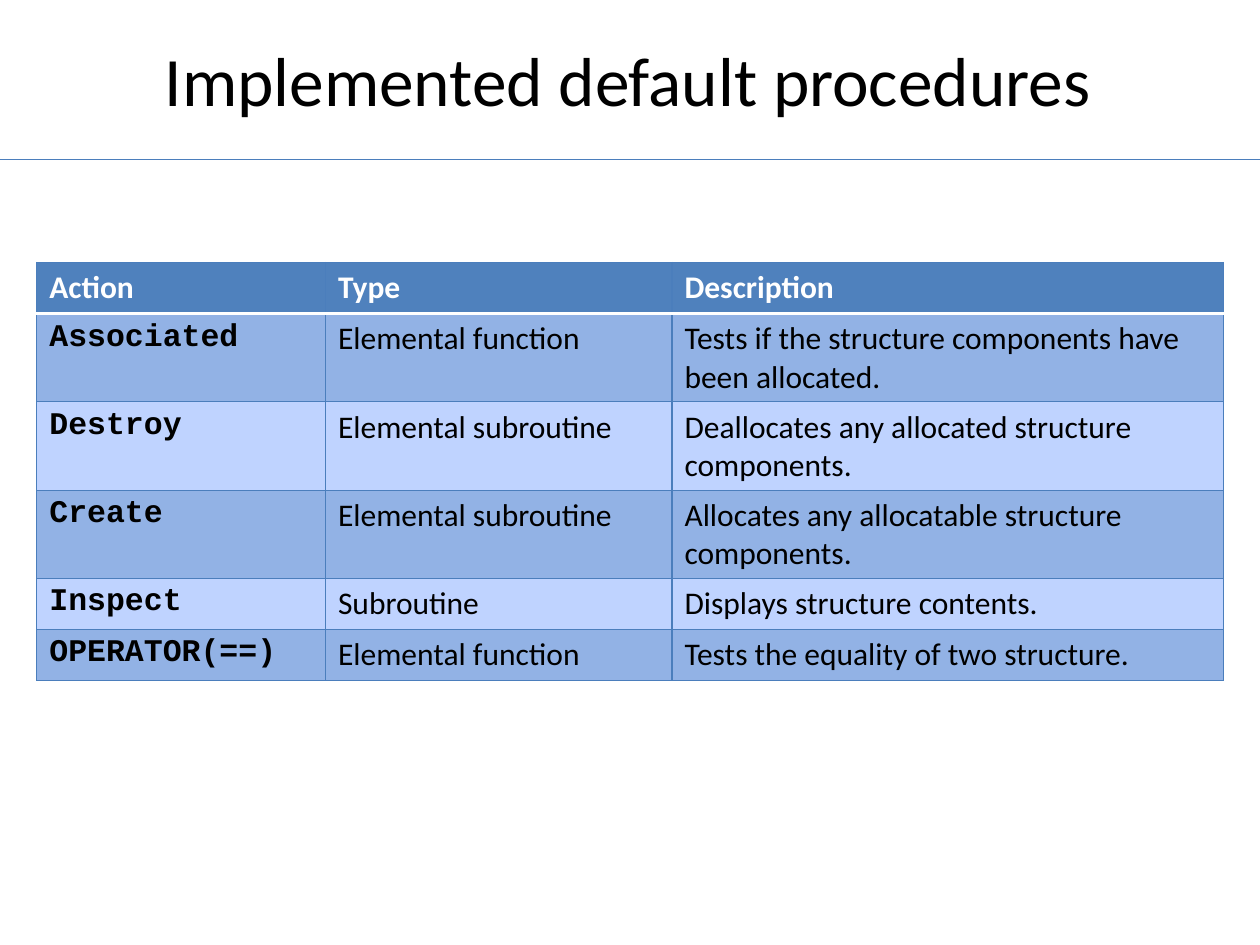
from dataclasses import dataclass

from lxml import etree
from pptx import Presentation
from pptx.dml.color import RGBColor
from pptx.enum import shapes, text
from pptx.oxml.ns import qn
from pptx.util import Pt


@dataclass(frozen=True)
class Theme:
    body_font: str = "Calibri"
    code_font: str = "Courier New"
    title_size: float = 39.6
    table_size: float = 18
    ink: str = "000000"
    white: str = "FFFFFF"
    rule: str = "4B7EBC"
    header: str = "4F81BD"
    bands: tuple = ("92B2E5", "BFD3FF")
    thin: float = 0.75
    thick: float = 2


class SlideBuilder:
    def __init__(self, slide, theme):
        self.slide = slide
        self.theme = theme

    def style(self, p, size, color, font, bold=False):
        for r in p.runs:
            r.font.size = Pt(size)
            r.font.name = font
            r.font.bold = bold
            r.font.color.rgb = RGBColor.from_string(color)

    def title(self, words, x, y, w, h):
        tf = self.slide.shapes.add_textbox(Pt(x), Pt(y), Pt(w), Pt(h)).text_frame
        tf.word_wrap = True
        tf.vertical_anchor = text.MSO_ANCHOR.MIDDLE
        tf.text = words
        p = tf.paragraphs[0]
        p.alignment = text.PP_ALIGN.CENTER
        self.style(p, self.theme.title_size, self.theme.ink, self.theme.body_font)

    def rule(self, x1, x2, y):
        line = self.slide.shapes.add_connector(
            shapes.MSO_CONNECTOR.STRAIGHT, Pt(x1), Pt(y), Pt(x2), Pt(y))
        line.line.color.rgb = RGBColor.from_string(self.theme.rule)
        line.line.width = Pt(self.theme.thin)
        etree.SubElement(line._element.spPr, qn("a:effectLst"))

    def border(self, cell, side, color, width):
        tc_pr = cell._tc.get_or_add_tcPr()
        ln = etree.Element(qn(f"a:ln{side}"), w=str(Pt(width)))
        fill = etree.SubElement(ln, qn("a:solidFill"))
        etree.SubElement(fill, qn("a:srgbClr"), val=color)
        # Borders come before the fill, in the order L, R, T, B
        tc_pr.insert("LRTB".index(side), ln)

    def table(self, rows, x, y, widths, row_height):
        t = self.theme
        table = self.slide.shapes.add_table(
            len(rows), len(widths), Pt(x), Pt(y),
            Pt(sum(widths)), Pt(row_height * len(rows))).table
        for column, width in zip(table.columns, widths):
            column.width = Pt(width)
        for i, row in enumerate(rows):
            table.rows[i].height = Pt(row_height)
            for j, words in enumerate(row):
                cell = table.cell(i, j)
                cell.text = words
                is_header, is_code = i == 0, i > 0 and j == 0
                fill = t.header if is_header else t.bands[(i - 1) % 2]
                cell.fill.solid()
                cell.fill.fore_color.rgb = RGBColor.from_string(fill)
                self.style(cell.text_frame.paragraphs[0], t.table_size,
                           t.white if is_header else t.ink,
                           t.code_font if is_code else t.body_font,
                           bold=is_header or is_code)
                # A thick white line parts the header from the body
                white_sides = {0: "B", 1: "T"}.get(i, "")
                for side in "LRTB":
                    if side in white_sides:
                        self.border(cell, side, t.white, t.thick)
                    else:
                        self.border(cell, side, t.rule, t.thin)


PROCEDURES = [
    ("Action", "Type", "Description"),
    ("Associated", "Elemental function",
     "Tests if the structure components have been allocated."),
    ("Destroy", "Elemental subroutine",
     "Deallocates any allocated structure components."),
    ("Create", "Elemental subroutine",
     "Allocates any allocatable structure components."),
    ("Inspect", "Subroutine", "Displays structure contents."),
    ("OPERATOR(==)", "Elemental function",
     "Tests the equality of two structure."),
]


def main():
    prs = Presentation()
    prs.slide_width, prs.slide_height = Pt(720), Pt(540)
    builder = SlideBuilder(prs.slides.add_slide(prs.slide_layouts[6]), Theme())

    # Heading and the rule under it
    builder.rule(0, 720, 91)
    builder.title("Implemented default procedures", 82.8, 0, 552, 90)

    # Table of procedures
    builder.table(PROCEDURES, 21, 150, (165, 198, 315), 29.2)

    prs.save("out.pptx")


if __name__ == "__main__":
    main()
